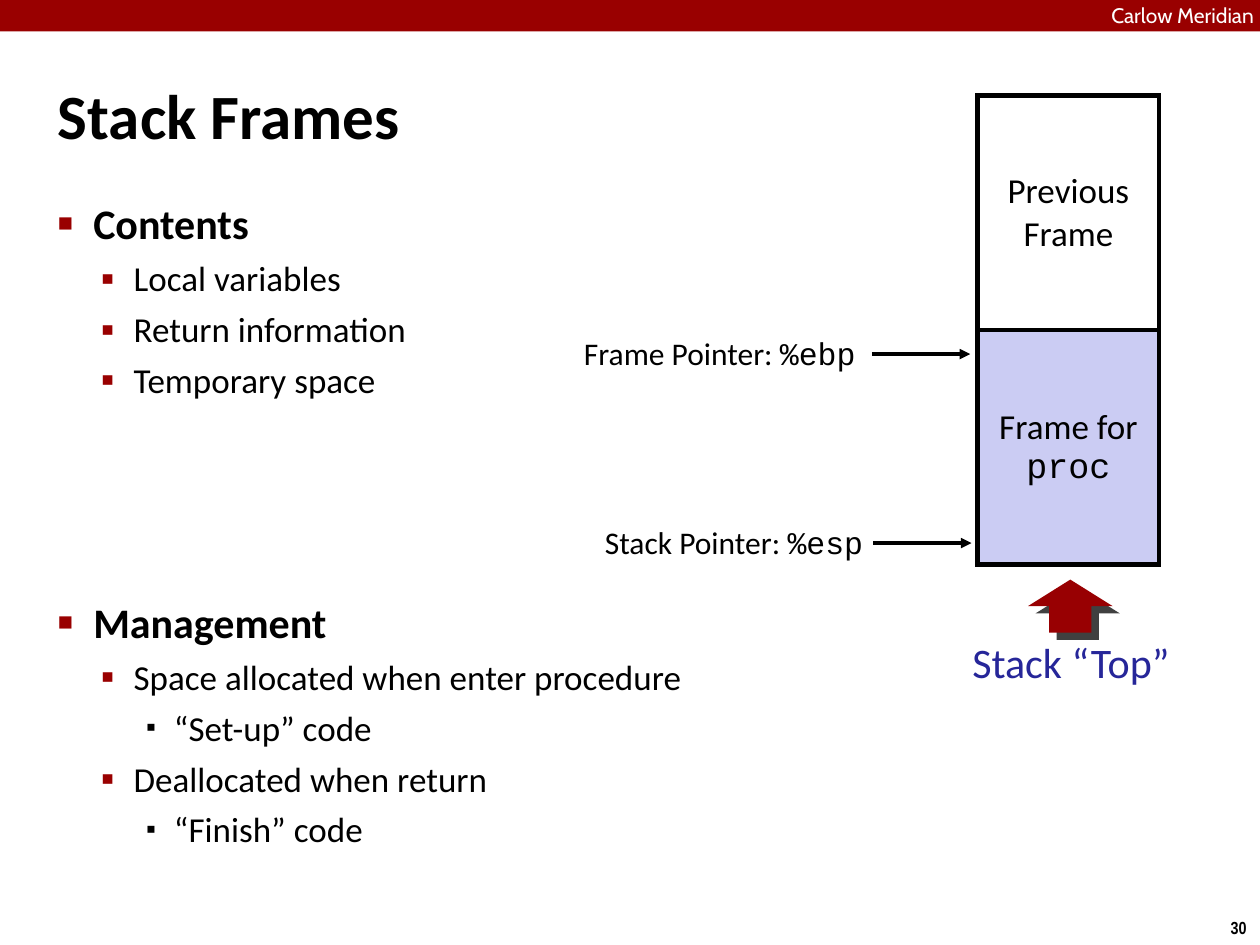
from dataclasses import dataclass

from lxml.etree import SubElement
from pptx import Presentation
from pptx.dml.color import RGBColor
from pptx.enum.shapes import MSO_CONNECTOR as Connector, MSO_SHAPE as Shape
from pptx.enum.text import MSO_ANCHOR as Anchor, MSO_AUTO_SIZE as AutoSize, PP_ALIGN as Align
from pptx.oxml.ns import qn
from pptx.util import Inches, Pt

RED = RGBColor(0x99, 0x00, 0x00)
ARROW_RED = RGBColor(0x98, 0x00, 0x02)
BLUE = RGBColor(0x26, 0x26, 0x99)
LAVENDER = RGBColor(0xCB, 0xCC, 0xF3)
BLACK = RGBColor(0, 0, 0)
WHITE = RGBColor(0xFF, 0xFF, 0xFF)
SANS, MONO = "Calibri", "Courier New"


@dataclass
class Level:
    margin: float
    hanging: float
    before: float
    size: float
    bold: bool
    bullet: str
    color: RGBColor
    percent: int


@dataclass
class Item:
    text: str
    level: int
    gap: float = 0


@dataclass
class Pointer:
    label: str
    register: str
    label_left: float
    arrow_left: float
    y: float


LEVELS = [
    Level(0.28, 0.28, 6, 24, True, "■", RED, 60),
    Level(0.6, 0.26, 5, 20, False, "▪", RED, 110),
    Level(0.92, 0.22, 5, 20, False, "▪", BLACK, 80),
]
ITEMS = [
    Item("Contents", 0),
    Item("Local variables", 1),
    Item("Return information", 1),
    Item("Temporary space", 1),
    Item("Management", 0, 106),
    Item("Space allocated when enter procedure", 1),
    Item("“Set-up” code", 2),
    Item("Deallocated when return", 1),
    Item("“Finish” code", 2),
]
POINTERS = [
    Pointer("Frame Pointer: ", "%ebp", 4.16, 6.92, 2.81),
    Pointer("Stack Pointer: ", "%esp", 4.22, 6.93, 4.31),
]


def child(parent, tag: str, **attrs):
    return SubElement(parent, qn(tag), {k: str(v) for k, v in attrs.items()})


def format_run(r, size: float, color=BLACK, font: str = SANS, bold: bool = False) -> None:
    r.font.size, r.font.name, r.font.bold = Pt(size), font, bold
    r.font.color.rgb = color


def set_margins(tf, margin: float) -> None:
    tf.margin_left = tf.margin_right = Inches(margin)
    tf.margin_top = tf.margin_bottom = Inches(margin)


def place(sp, left: float, top: float, width: float, height: float) -> None:
    sp.left, sp.top = Inches(left), Inches(top)
    sp.width, sp.height = Inches(width), Inches(height)


def add_text(s, box: tuple, text: str, size: float, align=Align.LEFT, color=BLACK,
             font: str = SANS, bold: bool = False, margin: float = 0.04, wrap: bool = True):
    tf = s.shapes.add_textbox(*map(Inches, box)).text_frame
    tf.word_wrap = wrap
    set_margins(tf, margin)
    p = tf.paragraphs[0]
    p.text, p.alignment = text, align
    format_run(p.runs[0], size, color, font, bold)
    return p


def add_banner(s) -> None:
    sp = s.shapes.add_shape(Shape.RECTANGLE, 0, 0, Inches(10), Inches(0.25))
    sp.shadow.inherit = False
    sp.fill.solid()
    sp.fill.fore_color.rgb = RED
    sp.line.fill.background()
    add_text(s, (8.82, 0.02, 1.44, 0.19), "Carlow Meridian", 12,
             color=WHITE, font="Cabin", margin=0)


def add_title(s) -> None:
    sp = s.shapes.title
    place(sp, 0.42, 0.28, 9.17, 1.25)
    tf = sp.text_frame
    tf.text = "Stack Frames"
    tf.auto_size, tf.vertical_anchor = AutoSize.NONE, Anchor.MIDDLE
    set_margins(tf, 0.04)
    p = tf.paragraphs[0]
    p.alignment = Align.LEFT
    format_run(p.runs[0], 36, bold=True)


def format_item(p, item: Item) -> None:
    level = LEVELS[item.level]
    p.level = item.level
    p.space_before = Pt(level.before + item.gap)
    format_run(p.runs[0], level.size, bold=level.bold)
    ppr = p._p.get_or_add_pPr()
    ppr.set("marL", str(Inches(level.margin)))
    ppr.set("indent", str(-Inches(level.hanging)))
    child(child(ppr, "a:buClr"), "a:srgbClr", val=level.color)
    child(ppr, "a:buSzPct", val=level.percent * 1000)
    child(ppr, "a:buChar", char=level.bullet)


def add_body(s) -> None:
    sp = s.placeholders[1]
    place(sp, 0.42, 1.53, 5.08, 5.94)
    tf = sp.text_frame
    tf.text = "\n".join(item.text for item in ITEMS)
    tf.auto_size = AutoSize.NONE
    set_margins(tf, 0.04)
    for p, item in zip(tf.paragraphs, ITEMS):
        format_item(p, item)


def add_pointer(s, pointer: Pointer) -> None:
    p = add_text(s, (pointer.label_left, pointer.y - 0.2, 2.67, 0.4),
                 pointer.label, 18, Align.RIGHT)
    r = p.add_run()
    r.text = pointer.register
    format_run(r, 18, font=MONO)
    y = Inches(pointer.y)
    line = s.shapes.add_connector(Connector.STRAIGHT, Inches(pointer.arrow_left), y,
                                  Inches(pointer.arrow_left + 0.78), y)
    line.line.color.rgb, line.line.width = BLACK, Pt(2)
    child(line.line._get_or_add_ln(), "a:tailEnd", type="triangle")
    child(line._element.spPr, "a:effectLst")


def add_borders(cell) -> None:
    tcpr = cell._tc.get_or_add_tcPr()
    for i, side in enumerate(("a:lnL", "a:lnR", "a:lnT", "a:lnB")):
        ln = tcpr.makeelement(qn(side), {"w": str(Pt(3))})
        child(child(ln, "a:solidFill"), "a:srgbClr", val=BLACK)
        tcpr.insert(i, ln)


def add_stack(s) -> None:
    table = s.shapes.add_table(2, 1, Inches(7.76), Inches(0.76),
                               Inches(1.44), Inches(3.72)).table
    table.first_row = table.horz_banding = False
    rows = [("Previous Frame", [SANS], None), ("Frame for\vproc", [SANS, MONO], LAVENDER)]
    for i, (text, fonts, fill) in enumerate(rows):
        cell = table.cell(i, 0)
        cell.vertical_anchor = Anchor.MIDDLE
        set_margins(cell, 0.06)
        p = cell.text_frame.paragraphs[0]
        p.text, p.alignment = text, Align.CENTER
        for r, font in zip(p.runs, fonts):
            format_run(r, 20, font=font)
        if fill is None:
            cell.fill.background()
        else:
            cell.fill.solid()
            cell.fill.fore_color.rgb = fill
        add_borders(cell)


def add_top_arrow(s) -> None:
    sp = s.shapes.add_shape(Shape.UP_ARROW, Inches(8.16), Inches(4.6), Inches(0.67), Inches(0.42))
    sp.fill.solid()
    sp.fill.fore_color.rgb = ARROW_RED
    sp.line.fill.background()
    sp.shadow.inherit = False
    effects = sp._element.spPr.find(qn("a:effectLst"))
    shadow = child(effects, "a:outerShdw", blurRad=0, dist=Pt(6), dir=45 * 60000,
                   algn="ctr", rotWithShape=0)
    child(child(shadow, "a:srgbClr", val=BLACK), "a:alpha", val=75000)


def main() -> None:
    prs = Presentation()
    prs.slide_width, prs.slide_height = Inches(10), Inches(7.5)
    s = prs.slides.add_slide(prs.slide_layouts[1])
    add_banner(s)
    add_title(s)
    add_body(s)
    for pointer in POINTERS:
        add_pointer(s, pointer)
    add_text(s, (7.65, 5.01, 1.7, 0.49), "Stack “Top”", 24, Align.CENTER, BLUE, wrap=False)
    add_top_arrow(s)
    add_stack(s)
    add_text(s, (9.66, 7.23, 0.34, 0.27), "30", 10, Align.CENTER,
             font="Arial Narrow", bold=True, margin=0.05, wrap=False)
    prs.save("out.pptx")


if __name__ == "__main__":
    main()
